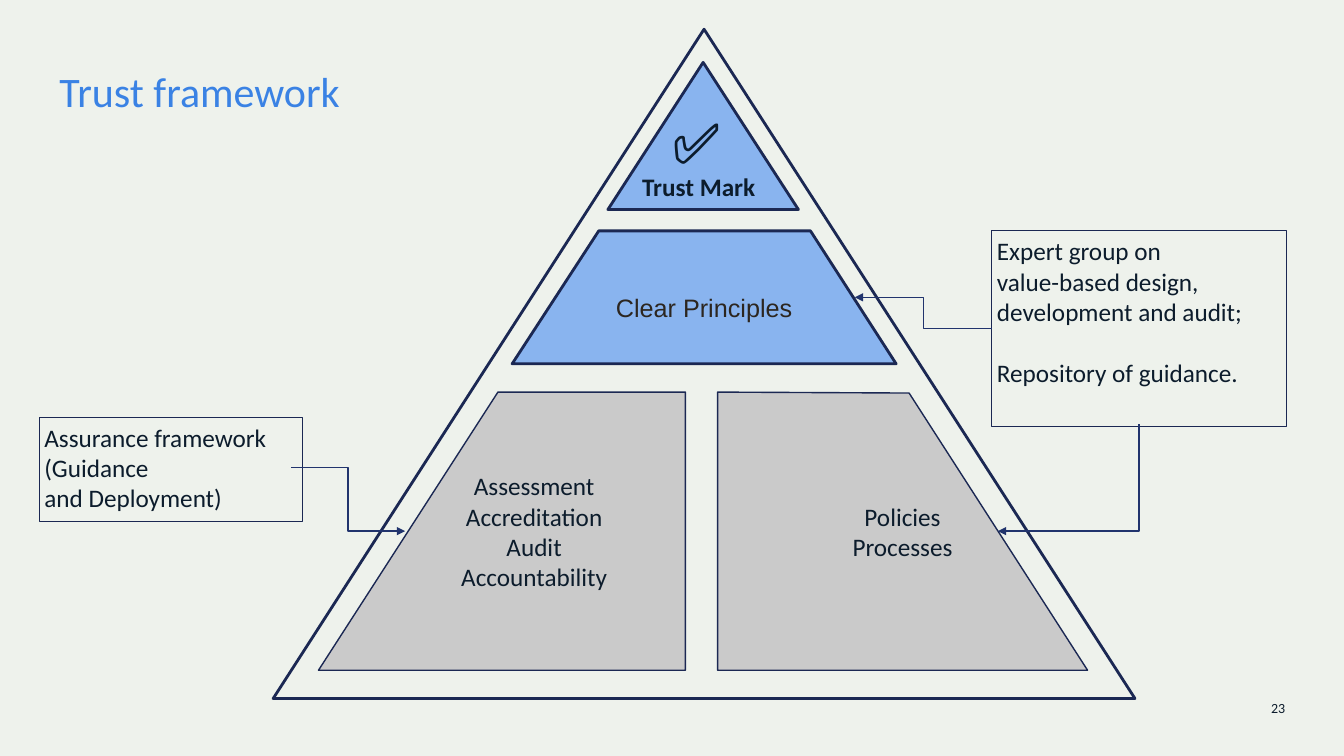
from lxml import etree
from pptx import Presentation
from pptx.dml.color import RGBColor
from pptx.enum.shapes import MSO_CONNECTOR, MSO_SHAPE
from pptx.enum.text import MSO_ANCHOR, PP_ALIGN
from pptx.oxml.ns import qn
from pptx.util import Pt

LEFT, CENTER, RIGHT = PP_ALIGN.LEFT, PP_ALIGN.CENTER, PP_ALIGN.RIGHT
TOP, MIDDLE = MSO_ANCHOR.TOP, MSO_ANCHOR.MIDDLE
TRIANGLE, RECTANGLE = MSO_SHAPE.ISOSCELES_TRIANGLE, MSO_SHAPE.RECTANGLE
ELBOW = MSO_CONNECTOR.ELBOW

COLORS = {
    "background": "EEF2EC", "title": "3A82E4", "text": "0C1C2C",
    "principles": "2C2620", "outline": "1B2853", "arrow": "21346D",
    "blue": "89B4EF", "gray": "CACACA",
}
INSET = 3.6
BODY_SIZE = 18

TITLE = "Trust framework"
TITLE_BOX = (42.5, 44.6, 875.5, 45.4)

# fill, box
TRIANGLES = [
    (None, (195.1, 20.9, 615.6, 478.1)),
    ("blue", (434.2, 44.6, 136.1, 105.1)),
]

# lines, corners, fill, line width, font, font color, insets (left, top)
PYRAMID_BLOCKS = [
    (["Clear Principles"],
     [(365.8, 259.9), (427.7, 164.9), (578.9, 164.9), (640.1, 259.9)],
     "blue", 2, "Arial", "principles", (0, 14.4)),
    (["Assessment", "Accreditation", "Audit", "Accountability"],
     [(227.5, 478.8), (355.7, 280.1), (489.6, 280.1), (489.6, 478.8)],
     "gray", 1, "Calibri", "text", (46, 0)),
    (["Policies", "Processes"],
     [(776.9, 478.8), (649.4, 280.8), (512.6, 280.1), (512.6, 478.8)],
     "gray", 1, "Calibri", "text", (0, 0)),
]

# text, box, size, bold, alignment, inset
LABELS = [
    ("✅", (476.6, 73.4, 52.6, 60.5), 40, False, LEFT, INSET),
    ("Trust Mark", (455, 118.8, 99.4, 29.5), BODY_SIZE, True, LEFT, INSET),
    ("23", (907.9, 499.7, 10.1, 12.2), 10, False, RIGHT, 0),
]

ASSURANCE_LINES = ["Assurance framework", "(Guidance", "and Deployment)"]
ASSURANCE_BOX = (28.1, 298.1, 187.9, 74.2)
ASSURANCE_ARROW = (208.1, 334.1, 289.4, 379.4)
EXPERT_LINES = ["Expert group on", "value-based design,",
                "development and audit;", "Repository of guidance."]
EXPERT_BOX = (708.5, 164.9, 210.2, 139.7)
EXPERT_ARROW = (708.5, 234.7, 610.6, 212.4)
POLICIES_ARROW = [(813.6, 303.1), (813.6, 379.4), (712.8, 379.4)]
REPOSITORY_GAP = 22


def points(values):
    return [Pt(value) for value in values]


def rgb(name):
    return RGBColor.from_string(COLORS[name])


def write(shape, lines, size=BODY_SIZE, font="Calibri", color="text",
          bold=False, alignment=LEFT, anchor=TOP, insets=(0, 0, 0, 0)):
    """Fill a shape with one paragraph per line; insets run left, top, right, bottom."""
    frame = shape.text_frame
    frame.text = "\n".join(lines)
    frame.word_wrap = True
    frame.vertical_anchor = anchor
    (frame.margin_left, frame.margin_top,
     frame.margin_right, frame.margin_bottom) = points(insets)
    for paragraph in frame.paragraphs:
        paragraph.alignment = alignment
        for run in paragraph.runs:
            run.font.size = Pt(size)
            run.font.name = font
            run.font.bold = bold
            run.font.color.rgb = rgb(color)


def paint(shape, fill, width, line="outline"):
    shape.shadow.inherit = False
    if fill:
        shape.fill.solid()
        shape.fill.fore_color.rgb = rgb(fill)
    else:
        shape.fill.background()
    shape.line.color.rgb = rgb(line)
    shape.line.width = Pt(width)


def add_outline(slide, corners, close):
    start, *others = [points(corner) for corner in corners]
    builder = slide.shapes.build_freeform(*start)
    builder.add_line_segments(others, close=close)
    return builder.convert_to_shape()


def add_arrowhead(shape):
    etree.SubElement(shape.line._get_or_add_ln(), qn("a:tailEnd"), type="triangle")


def add_elbow_arrow(slide, ends):
    connector = slide.shapes.add_connector(ELBOW, *points(ends))
    connector.line.color.rgb = rgb("arrow")
    connector.line.width = Pt(1)
    add_arrowhead(connector)
    etree.SubElement(connector._element.spPr, qn("a:effectLst"))
    return connector


def add_note(slide, lines, box):
    note = slide.shapes.add_shape(RECTANGLE, *points(box))
    paint(note, None, 0.75)
    write(note, lines, insets=[INSET] * 4)
    return note


def main():
    presentation = Presentation()
    presentation.slide_width, presentation.slide_height = Pt(960), Pt(540)
    slide = presentation.slides.add_slide(presentation.slide_layouts[5])
    slide.background.fill.solid()
    slide.background.fill.fore_color.rgb = rgb("background")

    title = slide.shapes.title
    title.left, title.top, title.width, title.height = points(TITLE_BOX)
    write(title, [TITLE], size=30, color="title")
    title.text_frame.paragraphs[0].line_spacing = 1.06

    for fill, box in TRIANGLES:
        paint(slide.shapes.add_shape(TRIANGLE, *points(box)), fill, 2)

    for lines, corners, fill, width, font, color, (left, top) in PYRAMID_BLOCKS:
        block = add_outline(slide, corners, close=True)
        paint(block, fill, width)
        write(block, lines, font=font, color=color, alignment=CENTER,
              anchor=MIDDLE, insets=(left, top, 0, 0))

    for text, box, size, bold, alignment, inset in LABELS:
        write(slide.shapes.add_textbox(*points(box)), [text], size=size,
              bold=bold, alignment=alignment, insets=[inset] * 4)

    add_note(slide, ASSURANCE_LINES, ASSURANCE_BOX)
    add_elbow_arrow(slide, ASSURANCE_ARROW)

    expert_note = add_note(slide, EXPERT_LINES, EXPERT_BOX)
    expert_note.text_frame.paragraphs[-1].space_before = Pt(REPOSITORY_GAP)
    add_elbow_arrow(slide, EXPERT_ARROW).begin_connect(expert_note, 1)

    policies_arrow = add_outline(slide, POLICIES_ARROW, close=False)
    paint(policies_arrow, None, 1, "arrow")
    add_arrowhead(policies_arrow)

    presentation.save("out.pptx")


if __name__ == "__main__":
    main()
